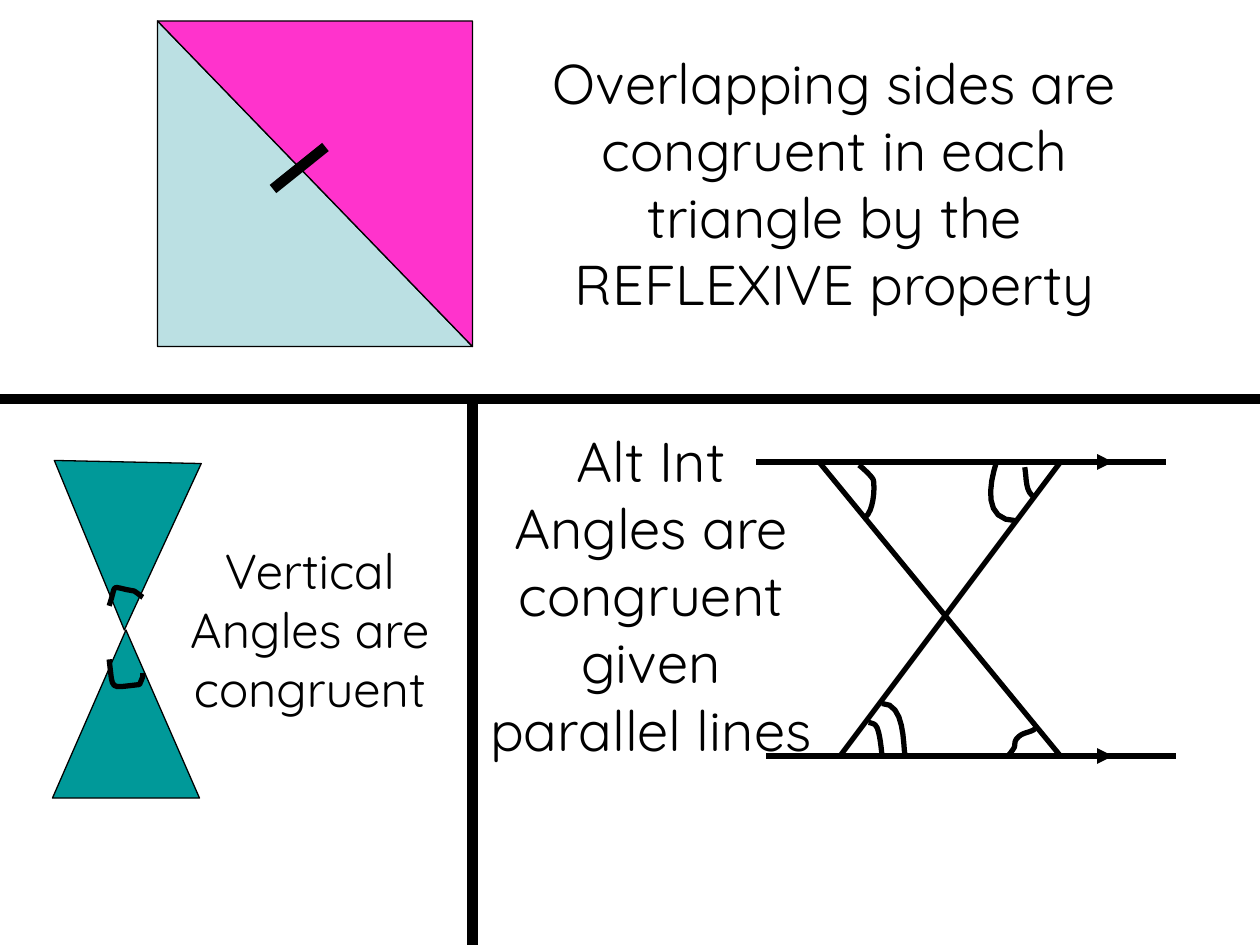
from dataclasses import dataclass

from lxml import etree
from pptx import Presentation, util as u
from pptx.dml.color import RGBColor
from pptx.enum import shapes, text
from pptx.oxml.ns import qn

COLS, ROWS = 120, 90  # slide grid: 12 cells to the inch
CELL = u.Inches(10) // COLS
SPLIT_ROW, SPLIT_COL = 38, 45
BLACK, TEAL, PALE, PINK = "000000", "009999", "BBE0E3", "FF33CC"
CURVE_STEPS = 8


@dataclass
class Region:
    """A box of the slide grid; its parts are placed from its top left cell."""
    slide: object
    col: float
    row: float

    def point(self, x, y):
        return u.Emu(round((self.col + x) * CELL)), u.Emu(round((self.row + y) * CELL))

    def box(self, x, y, w, h):
        return *self.point(x, y), u.Emu(round(w * CELL)), u.Emu(round(h * CELL))


def rgb(hex_color):
    return RGBColor.from_string(hex_color)


def set_line(part, width):
    part.line.color.rgb = rgb(BLACK)
    part.line.width = u.Pt(width)


def add_text(region, box, words, size=32, font="Quicksand", color=BLACK):
    frame = region.slide.shapes.add_textbox(*region.box(*box)).text_frame
    frame.word_wrap = True
    paragraph = frame.paragraphs[0]
    paragraph.alignment = text.PP_ALIGN.CENTER
    run = paragraph.add_run()
    run.text = words
    run.font.size = u.Pt(size)
    run.font.name = font
    run.font.color.rgb = rgb(color)


def add_triangle(region, kind, box, color, rotation=0):
    triangle = region.slide.shapes.add_shape(kind, *region.box(*box))
    triangle.shadow.inherit = False
    triangle.fill.solid()
    triangle.fill.fore_color.rgb = rgb(color)
    set_line(triangle, 0.75)
    triangle.rotation = rotation


def add_line(region, start, end, width=3, arrow=False):
    line = region.slide.shapes.add_connector(
        shapes.MSO_CONNECTOR.STRAIGHT, *region.point(*start), *region.point(*end))
    set_line(line, width)
    if arrow:
        etree.SubElement(line.line._get_or_add_ln(), qn("a:tailEnd"), type="triangle")
    etree.SubElement(line._element.spPr, qn("a:effectLst"))


def add_arc(region, *knots):
    """Draw a chain of cubic curves: a start, then three points for each curve."""
    points = []
    for first in range(0, len(knots) - 1, 3):
        a, b, c, d = knots[first:first + 4]
        for step in range(1, CURVE_STEPS + 1):
            t = step / CURVE_STEPS
            weights = (1 - t) ** 3, 3 * t * (1 - t) ** 2, 3 * t * t * (1 - t), t ** 3
            x, y = (sum(w * p[axis] for w, p in zip(weights, (a, b, c, d)))
                    for axis in (0, 1))
            points.append(region.point(x, y))
    builder = region.slide.shapes.build_freeform(*region.point(*knots[0]))
    builder.add_line_segments(points, close=False)
    arc = builder.convert_to_shape()
    arc.shadow.inherit = False
    arc.fill.background()
    set_line(arc, 3)


def reflexive_region(region):
    # Square split along its shared diagonal
    for color, rotation in ((PALE, 0), (PINK, 180)):
        add_triangle(region, shapes.MSO_SHAPE.RIGHT_TRIANGLE, (15, 2, 30, 31),
                     color, rotation)
    add_line(region, (26, 18), (31, 14), width=6)
    add_text(region, (49, 4, 61, 27.1), "Overlapping sides are congruent in each "
             "triangle by the REFLEXIVE property")


def vertical_region(region):
    # Two triangles meeting at a point
    for row, rotation in ((22, 0), (6, 181.2)):
        add_triangle(region, shapes.MSO_SHAPE.ISOSCELES_TRIANGLE, (5, row, 14, 16),
                     TEAL, rotation)
    # Marks of the vertical angles
    add_arc(region, (10.4, 19.7), (11.2, 17.4), (10.3, 17.9), (12.8, 18.3),
            (13.1, 18.5), (13.6, 18.9), (13.6, 18.9))
    add_arc(region, (10.4, 24.8), (10.8, 27.9), (10.3, 27.5), (13.3, 27.2),
            (13.7, 26.2), (13.6, 26.6), (13.6, 26.1))
    add_text(region, (15, 12.9, 29, 18.1), "Vertical Angles are congruent", size=28)


def alternate_region(region):
    top, bottom = 6, 34
    # Parallel lines with arrows
    for left, row in ((27, top), (28, bottom)):
        add_line(region, (left, row), (left + 39, row))
        add_line(region, (31, row), (61, row), arrow=True)
    # Transversals
    add_line(region, (56, top), (35, bottom))
    add_line(region, (33, top), (56, bottom))
    # Single marks: upper left, lower right
    add_arc(region, (36.8, 6.3), (37.1, 6.5), (38.2, 7.5), (38.2, 7.8),
            (38.3, 8.7), (38.2, 10.6), (37.4, 11.3))
    add_arc(region, (51, bottom), (51.2, 33.8), (51.4, 33.5), (51.6, 33.2),
            (51.7, 32.9), (51.6, 32.7), (51.8, 32.4),
            (52.3, 31.7), (53.2, 31.8), (53.6, 31.4))
    # Double marks: lower left, upper right
    add_arc(region, (39, bottom), (39, bottom), (38.8, 31.4), (38.4, 31.1),
            (38.3, 30.9), (37.7, 30.8), (37.7, 30.8))
    add_arc(region, (41.2, bottom), (41, 32.9), (41.2, 29), (39, 29))
    add_arc(region, (52.6, 6.5), (52.8, 7.6), (52.6, 8.9), (53.6, 9.4))
    add_arc(region, (49.9, top), (49.2, 8.2), (48.6, 11.6), (51.8, 11.6))
    add_text(region, (0, 2, 34, 33.5),
             "Alt Int Angles are congruent given parallel lines")


def dividers(region):
    add_line(region, (0, SPLIT_ROW), (COLS, SPLIT_ROW), width=6)
    add_line(region, (SPLIT_COL, SPLIT_ROW), (SPLIT_COL, ROWS), width=6)


def main():
    deck = Presentation()
    deck.slide_width, deck.slide_height = COLS * CELL, ROWS * CELL
    slide = deck.slides.add_slide(deck.slide_layouts[6])
    reflexive_region(Region(slide, 0, 0))
    vertical_region(Region(slide, 0, SPLIT_ROW))
    alternate_region(Region(slide, SPLIT_COL, SPLIT_ROW))
    dividers(Region(slide, 0, 0))
    deck.save("out.pptx")


if __name__ == "__main__":
    main()
